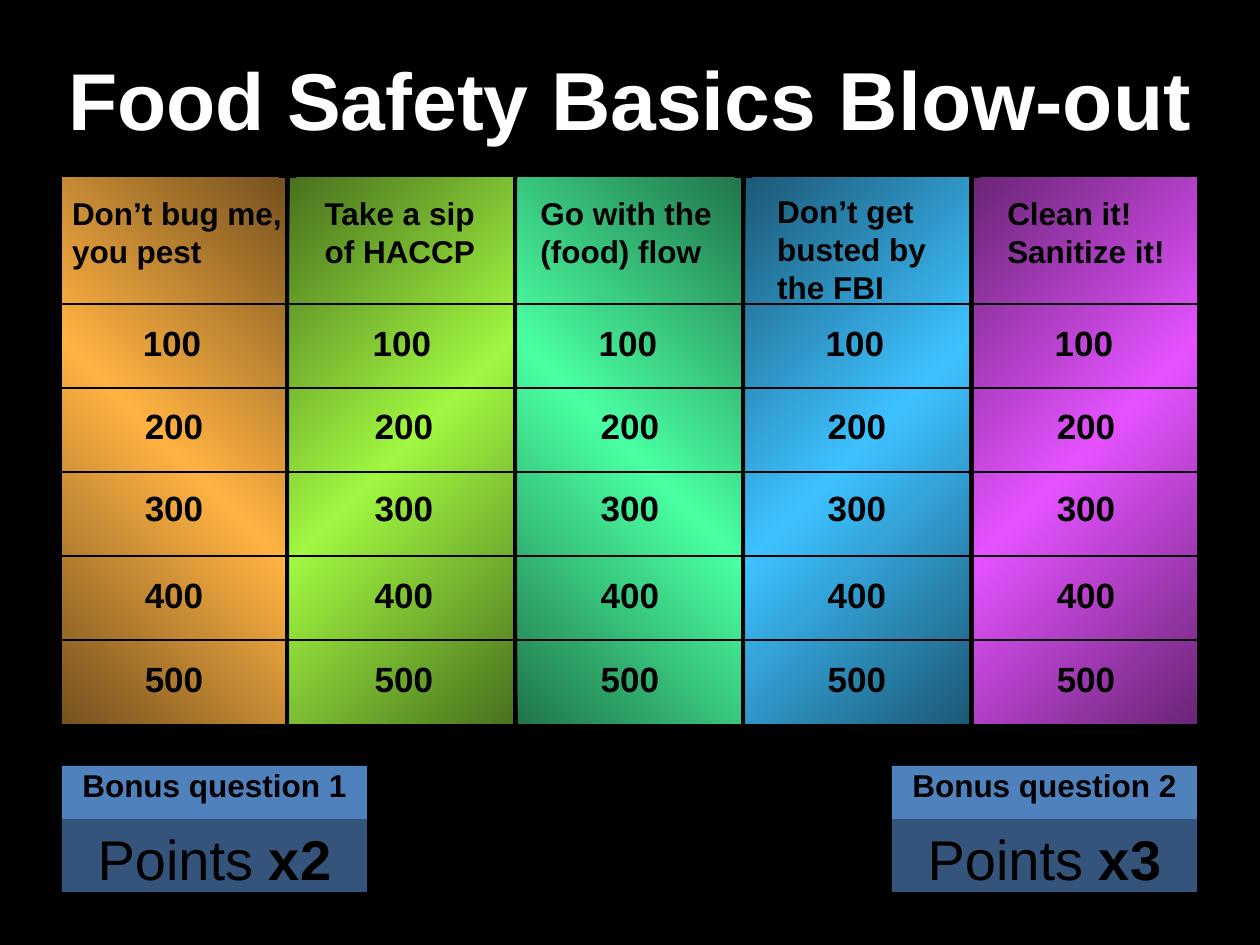
from dataclasses import dataclass

from pptx import Presentation, util as u
from pptx.dml.color import RGBColor
from pptx.enum import shapes, text
from pptx.oxml import parse_xml
from pptx.oxml.ns import nsdecls, qn

EMU_PER_PX = 914400 / 126
FONT = "Arial"
COLORS = {"ink": "000000", "title": "FFFFFF", "bonus": "4F81BD"}
BOARD_TOP, BOARD_HEIGHT = 178, 546
COLUMN_LEFT, COLUMN_PITCH, COLUMN_WIDTH = 62, 228, 223
RULE_TOP, RULE_PITCH = 304, 84


@dataclass
class Category:
    heading: str
    heading_box: tuple[int, int, int, int]
    value_left: int
    edge: str
    glow: str
    angle: int


@dataclass
class Prize:
    points: str
    top: int
    shift: int = 0


@dataclass
class Bonus:
    label: str
    multiplier: str
    left: int


@dataclass
class Style:
    size: int
    bold: bool = True
    color: str = "ink"


CATEGORIES = [
    Category("Don’t bug me,\vyou pest", (60, 189, 234, 81), 75, "76521F", "FFB242", 315),
    Category("Take a sip \vof HACCP", (294, 189, 220, 81), 305, "4A721E", "A0F640", 45),
    Category("Go with the \v(food) flow", (515, 189, 231, 81), 531, "22764B", "49FFA2", 315),
    Category("Don’t get \vbusted by \vthe FBI", (746, 187, 220, 118), 758, "1C5976", "3DC1FF", 45),
    Category("Clean it!\nSanitize it!", (976, 189, 220, 81), 987, "6A2676", "E452FF", 45),
]
PRIZES = [
    Prize("100", 318, -2),
    Prize("200", 401),
    Prize("300", 483),
    Prize("400", 570),
    Prize("500", 654),
]
BONUSES = [Bonus("Bonus question 1", "x2", 62), Bonus("Bonus question 2", "x3", 892)]


def px(length: int) -> int:
    return round(length * EMU_PER_PX)


def rgb(name: str) -> RGBColor:
    return RGBColor.from_string(COLORS[name])


def format_run(run, style: Style) -> None:
    run.font.name = FONT
    run.font.size = u.Pt(style.size)
    run.font.bold = style.bold
    run.font.color.rgb = rgb(style.color)


def set_margins(frame, left: int, top: int, right: int, bottom: int) -> None:
    frame.margin_left, frame.margin_top = px(left), px(top)
    frame.margin_right, frame.margin_bottom = px(right), px(bottom)


def add_rectangle(slide, left: int, top: int, width: int, height: int):
    panel = slide.shapes.add_shape(
        shapes.MSO_SHAPE.RECTANGLE, px(left), px(top), px(width), px(height))
    panel.shadow.inherit = False
    panel.line.fill.background()
    return panel


def add_label(slide, wording: str, box: tuple[int, int, int, int], style: Style,
              spacing: float, top_margin: int = 0):
    frame = slide.shapes.add_textbox(*map(px, box)).text_frame
    frame.word_wrap = True
    set_margins(frame, 0, top_margin, 0, 0)
    frame.text = wording
    for paragraph in frame.paragraphs:
        paragraph.line_spacing = spacing
        for run in paragraph.runs:
            format_run(run, style)
    return frame


def add_title(slide) -> None:
    title = slide.shapes.title
    title.left, title.top, title.width, title.height = map(px, (39, 38, 1182, 120))
    frame = title.text_frame
    frame.auto_size = text.MSO_AUTO_SIZE.NONE
    frame.vertical_anchor = text.MSO_ANCHOR.MIDDLE
    paragraph = frame.paragraphs[0]
    paragraph.alignment = text.PP_ALIGN.CENTER
    for wording, size in (("Food Safety ", 46), ("Basics Blow-out", 47)):
        run = paragraph.add_run()
        run.text = wording
        format_run(run, Style(size, color="title"))


def add_column(slide, index: int, category: Category) -> None:
    column = add_rectangle(slide, COLUMN_LEFT + index * COLUMN_PITCH, BOARD_TOP,
                           COLUMN_WIDTH, BOARD_HEIGHT)
    stops = "".join(
        f'<a:gs pos="{position}"><a:srgbClr val="{color}"/></a:gs>'
        for position, color in ((0, category.edge), (50000, category.glow),
                                (100000, category.edge)))
    gradient = parse_xml(
        f'<a:gradFill {nsdecls("a")} rotWithShape="1"><a:gsLst>{stops}</a:gsLst>'
        f'<a:lin ang="{category.angle * 60000}" scaled="0"/></a:gradFill>')
    column._element.spPr.find(qn("a:prstGeom")).addnext(gradient)


def add_category_text(slide, category: Category) -> None:
    heading = add_label(slide, category.heading, category.heading_box, Style(18), 1.0, 5)
    heading._txBody.bodyPr.set("anchorCtr", "1")
    for prize in PRIZES:
        box = (category.value_left + prize.shift, prize.top, 198, 54)
        value = add_label(slide, prize.points, box, Style(20), 0.9)
        value.vertical_anchor = text.MSO_ANCHOR.MIDDLE
        value.paragraphs[0].alignment = text.PP_ALIGN.CENTER


def add_rule(slide, y: int) -> None:
    rule = slide.shapes.add_connector(
        shapes.MSO_CONNECTOR.STRAIGHT, px(58), px(y), px(1197), px(y))
    rule.line.color.rgb = rgb("ink")
    rule.line.width = u.Pt(1.5)
    rule._element.spPr.append(parse_xml(f'<a:effectLst {nsdecls("a")}/>'))


def add_bonus(slide, bonus: Bonus) -> None:
    header = add_rectangle(slide, bonus.left, 766, 305, 53)
    score = add_rectangle(slide, bonus.left, 819, 305, 73)
    for panel in (header, score):
        panel.fill.solid()
        panel.fill.fore_color.rgb = rgb("bonus")
        panel.text_frame.vertical_anchor = text.MSO_ANCHOR.TOP
        panel.text_frame.paragraphs[0].alignment = text.PP_ALIGN.CENTER
    color = score._element.spPr.find(qn("a:solidFill"))[0]
    color.append(parse_xml(f'<a:alpha {nsdecls("a")} val="66000"/>'))
    set_margins(header.text_frame, 0, 0, 0, 0)
    set_margins(score.text_frame, 13, 6, 13, 5)
    score.text_frame.word_wrap = False
    parts = (
        (header, bonus.label, Style(18)),
        (score, "Points ", Style(32, bold=False)),
        (score, bonus.multiplier, Style(32)),
    )
    for panel, wording, style in parts:
        run = panel.text_frame.paragraphs[0].add_run()
        run.text = wording
        format_run(run, style)


def main() -> None:
    deck = Presentation()
    deck.slide_width, deck.slide_height = px(1260), px(945)
    slide = deck.slides.add_slide(deck.slide_layouts[5])
    slide.background.fill.solid()
    slide.background.fill.fore_color.rgb = rgb("ink")
    add_title(slide)
    for index, category in enumerate(CATEGORIES):
        add_column(slide, index, category)
    for category in CATEGORIES:
        add_category_text(slide, category)
    for index in range(len(PRIZES)):
        add_rule(slide, RULE_TOP + index * RULE_PITCH)
    for bonus in BONUSES:
        add_bonus(slide, bonus)
    deck.save("out.pptx")


if __name__ == "__main__":
    main()
